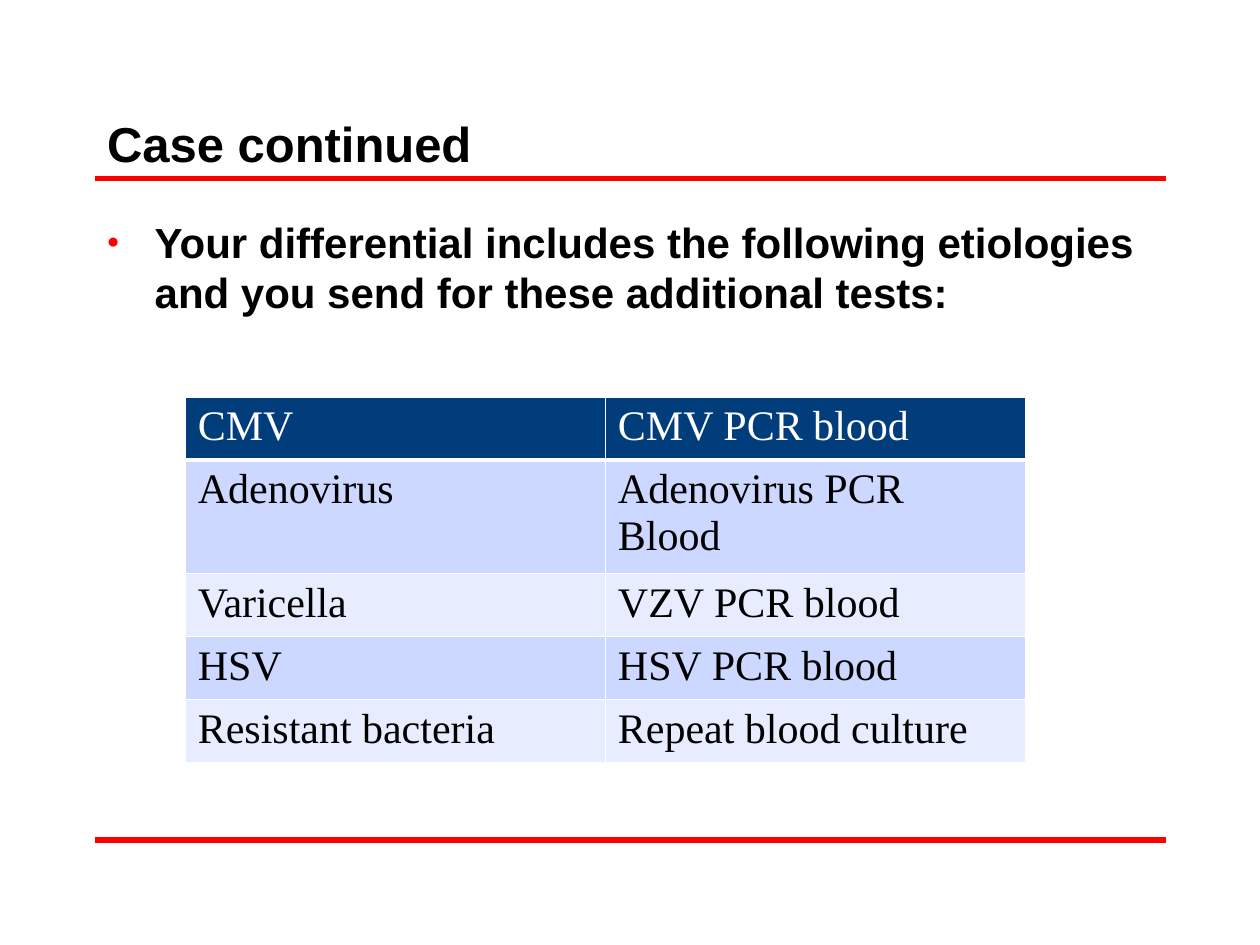
"""Build the case slide: ruled title, one bullet and a table of tests."""
from dataclasses import dataclass

from lxml import etree
from pptx import Presentation, util as u
from pptx.dml.color import RGBColor as Rgb
from pptx.enum import shapes, text
from pptx.oxml import ns


@dataclass(frozen=True)
class Theme:
    ink: str = "000000"
    paper: str = "FFFFFF"
    rule: str = "FF0000"
    head: str = "003D7A"
    bands: tuple = ("E7EDFF", "CCD8FF")
    sans: str = "Arial"
    serif: str = "Times New Roman"
    large: int = 28
    base: int = 24


def style(para, face, size, color, bold):
    for run in para.runs:
        font = run.font
        font.name, font.size, font.bold = face, u.Pt(size), bold
        font.color.rgb = Rgb.from_string(color)


def add(parent, tag, **attrs):
    node = etree.SubElement(parent, ns.qn(tag))
    for key, value in attrs.items():
        node.set(key, str(value))
    return node


look = Theme()
deck = Presentation()
deck.slide_width, deck.slide_height = u.Inches(10), u.Inches(7.5)
col, row = deck.slide_width // 40, deck.slide_height // 90
left, width = 3 * col, 34 * col
slide = deck.slides.add_slide(deck.slide_layouts[5])

for level in (17, 80):
    line = slide.shapes.add_connector(
        shapes.MSO_CONNECTOR.STRAIGHT, left, level * row, left + width, level * row)
    line.line.color.rgb = Rgb.from_string(look.rule)
    line.line.width = u.Pt(3)
    add(line._element.spPr, "a:effectLst")

title = slide.shapes.title
title.left, title.top, title.width, title.height = left, 5 * row, width, 12 * row
title.text_frame.text = "Case continued"
title.text_frame.vertical_anchor = text.MSO_ANCHOR.BOTTOM
para = title.text_frame.paragraphs[0]
para.alignment = text.PP_ALIGN.LEFT
style(para, look.sans, look.large, look.ink, True)

body = slide.shapes.add_textbox(left, 20 * row, width, 60 * row)
body.text_frame.word_wrap = True
body.text_frame.text = ("Your differential includes the following etiologies "
                        "and you send for these additional tests:")
para = body.text_frame.paragraphs[0]
style(para, look.sans, look.base, look.ink, True)
props = para._p.get_or_add_pPr()
props.set("marL", str(u.Inches(0.38)))
props.set("indent", str(u.Inches(-0.38)))
add(add(props, "a:spcBef"), "a:spcPct", val=20000)
add(add(props, "a:buClr"), "a:srgbClr", val=look.rule)
add(props, "a:buSzPct", val=50000)
add(props, "a:buFont", typeface=look.sans)
add(props, "a:buChar", char="●")

tests = [
    ("CMV", "CMV PCR blood"),
    ("Adenovirus", "Adenovirus PCR Blood"),
    ("Varicella", "VZV PCR blood"),
    ("HSV", "HSV PCR blood"),
    ("Resistant bacteria", "Repeat blood culture"),
]
frame = slide.shapes.add_table(
    len(tests), 2, u.Inches(1.47), u.Inches(3.15), u.Inches(6.67), u.Inches(2.03))
for r, pair in enumerate(tests):
    for c, label in enumerate(pair):
        cell = frame.table.cell(r, c)
        cell.text = label
        style(cell.text_frame.paragraphs[0], look.serif, look.base,
              look.ink if r else look.paper, False)
        props = cell._tc.get_or_add_tcPr()
        for side in "LRTB":
            thick = (side, r) in (("B", 0), ("T", 1))
            edge = add(props, f"a:ln{side}", w=u.Pt(3 if thick else 1))
            add(add(edge, "a:solidFill"), "a:srgbClr", val=look.paper)
        cell.fill.solid()
        cell.fill.fore_color.rgb = Rgb.from_string(look.bands[r % 2] if r else look.head)

deck.save("out.pptx")
